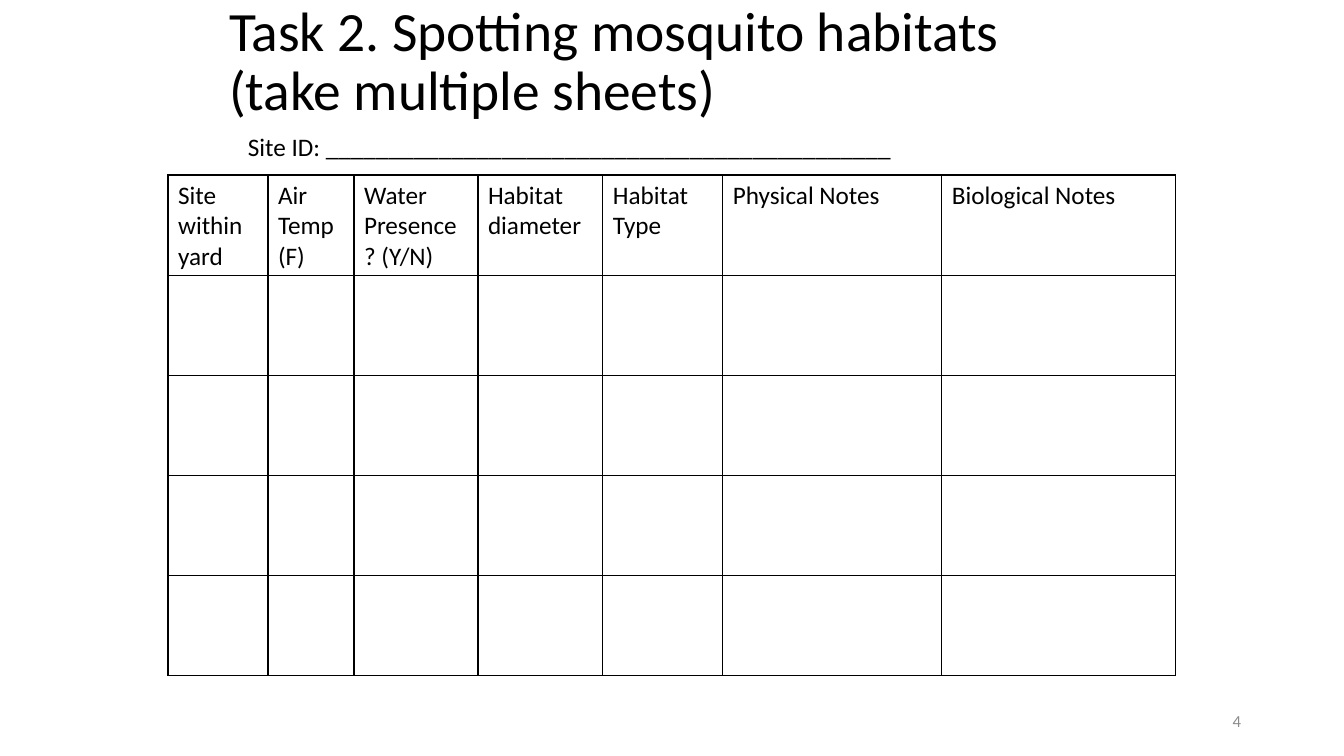
import dataclasses

import lxml.etree
import pptx
import pptx.dml.color
import pptx.enum.text
import pptx.oxml.ns
import pptx.util

EMU_PER_PX = 12192000 / 1344
FONT = "Calibri"
BLACK = pptx.dml.color.RGBColor(0x00, 0x00, 0x00)
GREY = pptx.dml.color.RGBColor(0x8C, 0x8C, 0x8C)
ALIGN = pptx.enum.text.PP_ALIGN
ANCHOR = pptx.enum.text.MSO_ANCHOR


@dataclasses.dataclass
class Column:
    heading: str
    width: int


COLUMNS = [
    Column("Site within\nyard", 100),
    Column("Air Temp (F)", 86),
    Column("Water Presence? (Y/N)", 124),
    Column("Habitat diameter", 125),
    Column("Habitat Type", 120),
    Column("Physical Notes", 219),
    Column("Biological Notes", 234),
]
BLANK_ROWS = 4
ROW_HEIGHT = 100


def px(length: int) -> pptx.util.Emu:
    return pptx.util.Emu(round(length * EMU_PER_PX))


def write(frame, text: str, *, size: float = 18, color=BLACK, align=ALIGN.LEFT,
          anchor=ANCHOR.TOP, spacing: float = 1.0) -> None:
    """Fill a text frame; each newline starts a paragraph, each \\v a line."""
    frame.word_wrap = True
    frame.vertical_anchor = anchor
    frame.text = text
    for para in frame.paragraphs:
        para.alignment = align
        para.line_spacing = spacing
        para.font.size = pptx.util.Pt(size)
        for span in para.runs:
            span.font.name = FONT
            span.font.size = pptx.util.Pt(size)
            span.font.bold = False
            span.font.color.rgb = color


def add_text(page, text: str, left: int, top: int, width: int, height: int, **style):
    box = page.shapes.add_textbox(px(left), px(top), px(width), px(height))
    write(box.text_frame, text, **style)
    return box


def outline(cell, color=BLACK, points: float = 1) -> None:
    """Draw all four borders of a cell, ahead of its fill."""
    properties = cell._tc.get_or_add_tcPr()
    for position, side in enumerate(("lnL", "lnR", "lnT", "lnB")):
        line = lxml.etree.Element(pptx.oxml.ns.qn(f"a:{side}"), w=str(pptx.util.Pt(points)))
        fill = lxml.etree.SubElement(line, pptx.oxml.ns.qn("a:solidFill"))
        lxml.etree.SubElement(fill, pptx.oxml.ns.qn("a:srgbClr"), val=str(color))
        properties.insert(position, line)


def add_record_table(page, left: int, top: int) -> None:
    row_count = BLANK_ROWS + 1
    width = sum(column.width for column in COLUMNS)
    table = page.shapes.add_table(row_count, len(COLUMNS), px(left), px(top),
                                  px(width), px(row_count * ROW_HEIGHT)).table
    table.first_row = False
    table.horz_banding = False
    for row in table.rows:
        row.height = px(ROW_HEIGHT)
    for index, column in enumerate(COLUMNS):
        table.columns[index].width = px(column.width)
        write(table.cell(0, index).text_frame, column.heading)
    for cell in table.iter_cells():
        cell.fill.background()
        outline(cell)


def main() -> None:
    deck = pptx.Presentation()
    deck.slide_width, deck.slide_height = px(1344), px(756)
    page = deck.slides.add_slide(deck.slide_layouts.get_by_name("Title Only"))

    # Title
    title = page.shapes.title
    title.left, title.top, title.width, title.height = px(219), px(0), px(907), px(126)
    title.text_frame.auto_size = pptx.enum.text.MSO_AUTO_SIZE.NONE
    write(title.text_frame, "Task 2. Spotting mosquito habitats\v(take multiple sheets)",
          size=39.6, anchor=ANCHOR.MIDDLE, spacing=0.9)

    # Site line and recording table
    add_text(page, "Site ID: " + "_" * 45, 238, 126, 690, 40)
    add_record_table(page, 168, 175)

    # Page number
    add_text(page, "4", 949, 701, 302, 40, size=12, color=GREY,
             align=ALIGN.RIGHT, anchor=ANCHOR.MIDDLE)

    deck.save("out.pptx")


if __name__ == "__main__":
    main()
